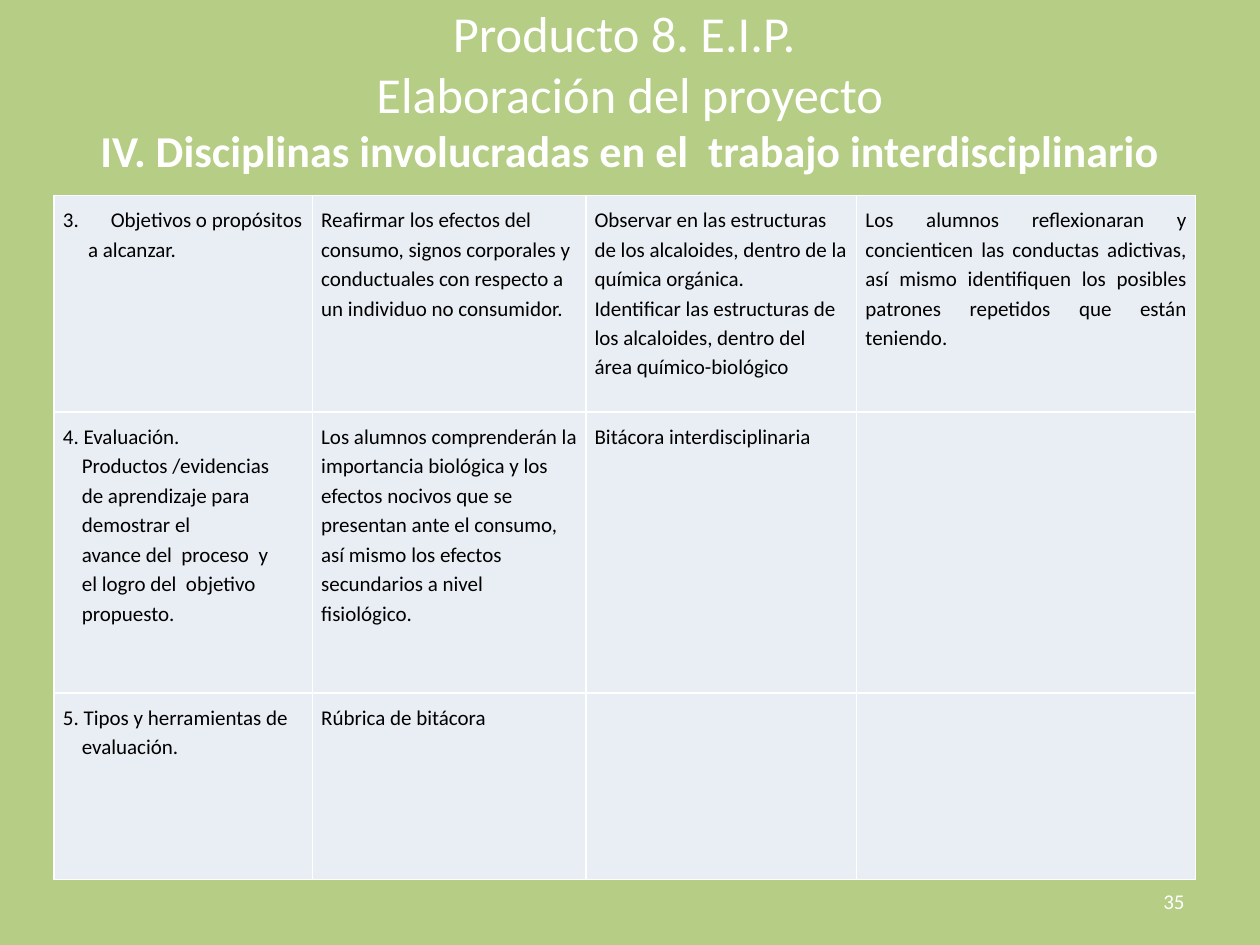
"""Build the slide on the disciplines involved in the interdisciplinary project."""
from dataclasses import dataclass

from lxml import etree
from pptx import Presentation
from pptx.dml.color import RGBColor
from pptx.enum.text import MSO_ANCHOR, MSO_AUTO_SIZE, PP_ALIGN
from pptx.oxml.ns import qn
from pptx.slide import Slide
from pptx.table import _Cell
from pptx.text.text import _Paragraph, _Run
from pptx.util import Inches, Pt

LEFT, CENTER, RIGHT, JUSTIFY = PP_ALIGN.LEFT, PP_ALIGN.CENTER, PP_ALIGN.RIGHT, PP_ALIGN.JUSTIFY
MIDDLE = MSO_ANCHOR.MIDDLE
NO_AUTOFIT = MSO_AUTO_SIZE.NONE
TITLE_ONLY_LAYOUT = 5


@dataclass(frozen=True)
class Theme:
    font: str = "Calibri"
    background: str = "B5CD84"
    cell: str = "E9EDF4"
    light: str = "FFFFFF"
    dark: str = "000000"
    title_size: float = 28.8
    subtitle_size: float = 25.2
    body_size: float = 12
    line_spacing: float = 1.15
    border_width: float = 1
    cell_margin: float = 0.07


@dataclass(frozen=True)
class Line:
    text: str
    indent: float = 0
    hanging: float = 0
    number: int = 0
    alignment: PP_ALIGN = LEFT


THEME = Theme()
TEXT_INDENT = 0.15
COLUMN_WIDTHS = (2.05, 2.17, 2.15, 2.69)
ROW_HEIGHTS = (1.72, 2.23, 1.48)
TITLE_LINES = ("Producto 8. E.I.P. ", "Elaboración del proyecto",
               "IV. Disciplinas involucradas en el  trabajo interdisciplinario")
EVALUATION_LINES = ("Productos /evidencias", "de aprendizaje para", "demostrar el",
                    "avance del  proceso  y", "el logro del  objetivo", "propuesto.")
ROWS = (
    (
        (Line("Objetivos o propósitos", indent=0.38, hanging=0.38, number=3),
         Line("a alcanzar.", indent=0.2)),
        (Line("Reafirmar los efectos del consumo, signos corporales y conductuales "
              "con respecto a un individuo no consumidor."),),
        (Line("Observar en las estructuras de los alcaloides, dentro de la química orgánica."),
         Line("Identificar las estructuras de los alcaloides, dentro del área químico-biológico")),
        (Line("Los alumnos reflexionaran y concienticen las conductas adictivas, así mismo "
              "identifiquen los posibles patrones repetidos que están teniendo.",
              alignment=JUSTIFY),),
    ),
    (
        (Line("4. Evaluación."),
         *(Line(text, indent=TEXT_INDENT) for text in EVALUATION_LINES)),
        (Line("Los alumnos comprenderán la importancia biológica y los efectos nocivos que se "
              "presentan ante el consumo, así mismo los efectos secundarios a nivel "
              "fisiológico."),),
        (Line("Bitácora interdisciplinaria"),),
        (),
    ),
    (
        (Line("5. Tipos y herramientas de"), Line("evaluación.", indent=TEXT_INDENT)),
        (Line("Rúbrica de bitácora"),),
        (),
        (),
    ),
)


def format_run(run: _Run, size: float, color: str, bold: bool = False) -> None:
    """Give a run its font, size, colour and weight."""
    run.font.name = THEME.font
    run.font.size = Pt(size)
    run.font.bold = bold
    run.font.color.rgb = RGBColor.from_string(color)


def add_title(slide: Slide) -> None:
    """Fill the title placeholder with its three lines."""
    title = slide.shapes.title
    title.left, title.top = Inches(0.5), Inches(0.3)
    title.width, title.height = Inches(9), Inches(1.25)
    frame = title.text_frame
    frame.auto_size = NO_AUTOFIT
    frame.vertical_anchor = MIDDLE
    frame.margin_bottom = Inches(0.48)
    paragraph = frame.paragraphs[0]
    paragraph.text = "\v".join(TITLE_LINES)
    paragraph.alignment = CENTER
    *heading_runs, subtitle_run = paragraph.runs
    for run in heading_runs:
        format_run(run, THEME.title_size, THEME.light)
    format_run(subtitle_run, THEME.subtitle_size, THEME.light, bold=True)


def write_line(paragraph: _Paragraph, line: Line) -> None:
    """Write one line of a cell with its indent and number."""
    paragraph.text = line.text
    paragraph.alignment = line.alignment
    paragraph.line_spacing = THEME.line_spacing
    properties = paragraph._p.get_or_add_pPr()
    properties.set("marL", str(Inches(line.indent)))
    properties.set("indent", str(-Inches(line.hanging)))
    if line.number:
        etree.SubElement(properties, qn("a:buAutoNum"),
                         type="arabicPeriod", startAt=str(line.number))
    format_run(paragraph.runs[0], THEME.body_size, THEME.dark)


def style_cell(cell: _Cell) -> None:
    """Give a cell its margins, borders and fill."""
    cell.margin_left = cell.margin_right = Inches(THEME.cell_margin)
    cell.margin_top = cell.margin_bottom = Inches(THEME.cell_margin)
    properties = cell._tc.get_or_add_tcPr()
    for side in ("a:lnL", "a:lnR", "a:lnT", "a:lnB"):
        border = etree.SubElement(properties, qn(side), w=str(Pt(THEME.border_width)))
        fill = etree.SubElement(border, qn("a:solidFill"))
        etree.SubElement(fill, qn("a:srgbClr"), val=THEME.light)
    cell.fill.solid()
    cell.fill.fore_color.rgb = RGBColor.from_string(THEME.cell)


def add_disciplines_table(slide: Slide) -> None:
    """Draw the table of objectives, evaluation and tools."""
    table = slide.shapes.add_table(
        len(ROW_HEIGHTS), len(COLUMN_WIDTHS), Inches(0.43), Inches(1.55),
        Inches(sum(COLUMN_WIDTHS)), Inches(sum(ROW_HEIGHTS))).table
    table.first_row = table.horz_banding = False
    for column, width in zip(table.columns, COLUMN_WIDTHS):
        column.width = Inches(width)
    for row, height, contents in zip(table.rows, ROW_HEIGHTS, ROWS):
        row.height = Inches(height)
        for cell, lines in zip(row.cells, contents):
            style_cell(cell)
            cell.text_frame.text = "\n".join(line.text for line in lines)
            for paragraph, line in zip(cell.text_frame.paragraphs, lines):
                write_line(paragraph, line)


def add_page_number(slide: Slide, number: int) -> None:
    """Write the page number at the lower right."""
    frame = slide.shapes.add_textbox(
        Inches(7.17), Inches(6.95), Inches(2.33), Inches(0.4)).text_frame
    frame.word_wrap = True
    frame.vertical_anchor = MIDDLE
    frame.text = str(number)
    paragraph = frame.paragraphs[0]
    paragraph.alignment = RIGHT
    format_run(paragraph.runs[0], THEME.body_size, THEME.light)


def main() -> None:
    """Build and save the presentation."""
    presentation = Presentation()
    presentation.slide_width, presentation.slide_height = Inches(10), Inches(7.5)
    slide = presentation.slides.add_slide(presentation.slide_layouts[TITLE_ONLY_LAYOUT])
    slide.background.fill.solid()
    slide.background.fill.fore_color.rgb = RGBColor.from_string(THEME.background)
    add_title(slide)
    add_disciplines_table(slide)
    add_page_number(slide, 35)
    presentation.save("out.pptx")


if __name__ == "__main__":
    main()
